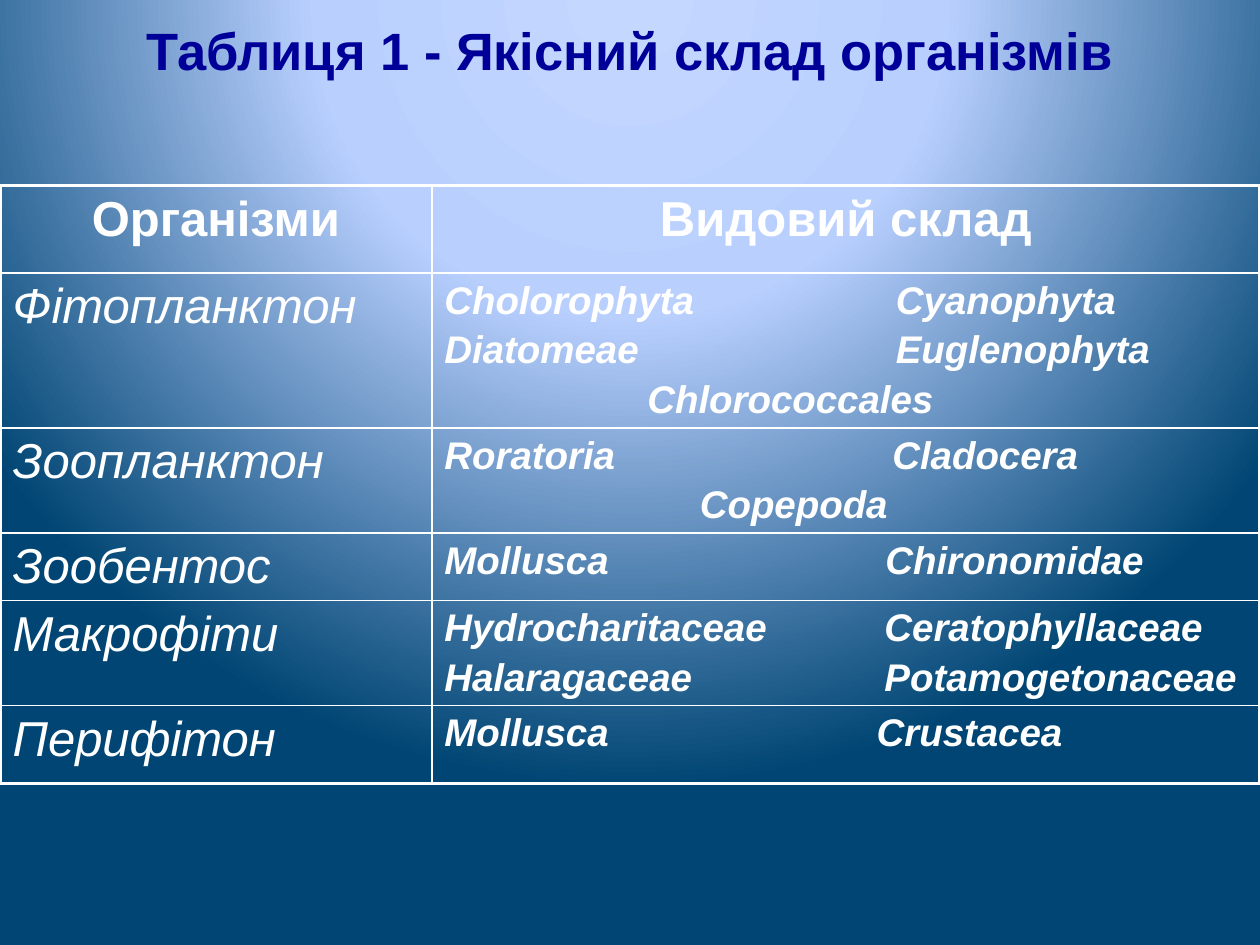
import pptx
import pptx.util
import pptx.oxml
import pptx.oxml.ns
import pptx.dml.color
import pptx.enum.text
from dataclasses import dataclass

Pt = pptx.util.Pt
ALIGN = pptx.enum.text.PP_ALIGN
ANCHOR = pptx.enum.text.MSO_ANCHOR
NS = pptx.oxml.ns.nsdecls("a", "p")

# Content: group, tab stop of the second species column, lines.
# A line is a pair of species, or one species with its indent.
TITLE = "Таблиця 1 - Якісний склад організмів"
HEADERS = ("Організми", "Видовий склад")
GROUPS = [
    ("Фітопланктон", 258, [("Cholorophyta", "Сyanophyta"),
                           ("Diatomeae", "Euglenophyta"),
                           (116, "Chlorococcales")]),
    ("Зоопланктон", 256, [("Roratoria", "Cladocera"), (146, "Copepoda")]),
    ("Зообентос", 252, [("Mollusca", "Chironomidae")]),
    ("Макрофіти", 251.5, [("Hydrocharitaceae", "Ceratophyllaceae"),
                          ("Halaragaceae", "Potamogetonaceae")]),
    ("Перифітон", 247, [("Mollusca", "Crustacea")]),
]

# Layout in points
WIDTH, HEIGHT = 720, 540
TITLE_HEIGHT = 57
TABLE_TOP = 106
COLUMNS = (246.75, 473.25)
ROWS = (50, 79, 60, 38, 58.5, 44.5)


@dataclass(frozen=True)
class Theme:
    font: str = "Arial"
    title: str = "000099"
    text: str = "FFFFFF"
    gradient: tuple = ((0, "C3D7FF"), (40, "B9D0FF"), (100, "004573"))
    title_size: int = 30
    group_size: int = 28
    species_size: int = 22
    thin: float = 1
    thick: float = 2.25
    space_before: float = 0.17


THEME = Theme()


def set_background(s):
    stops = "".join(f'<a:gs pos="{pos * 1000}"><a:srgbClr val="{color}"/></a:gs>'
                    for pos, color in THEME.gradient)
    s.element.cSld.insert(0, pptx.oxml.parse_xml(
        f'<p:bg {NS}><p:bgPr><a:gradFill rotWithShape="1"><a:gsLst>{stops}</a:gsLst>'
        '<a:path path="circle"><a:fillToRect l="50000" t="-80000" r="50000" b="180000"/>'
        '</a:path></a:gradFill><a:effectLst/></p:bgPr></p:bg>'))


def write(p, text, color, **formats):
    r = p.add_run()
    r.text = text
    for name, value in {"name": THEME.font, **formats}.items():
        setattr(r.font, name, value)
    r.font.color.rgb = pptx.dml.color.RGBColor.from_string(color)


def write_cell(p, text, size, align=ALIGN.LEFT, **formats):
    p.alignment = align
    p.space_before = Pt(size * THEME.space_before)
    write(p, text, THEME.text, size=Pt(size), **formats)


def write_species(tf, lines, tab):
    for i, (first, second) in enumerate(lines):
        p = tf.add_paragraph() if i else tf.paragraphs[0]
        paired = isinstance(first, str)
        write_cell(p, f"{first}\t{second}" if paired else second,
                   THEME.species_size, bold=True, italic=True)
        pPr = p._p.get_or_add_pPr()
        if paired:
            pPr.append(pptx.oxml.parse_xml(
                f'<a:tabLst {NS}><a:tab pos="{int(Pt(tab))}" algn="l"/></a:tabLst>'))
        else:
            pPr.set("marL", str(int(Pt(first))))
            pPr.set("indent", "0")


def set_borders(cell, row, col):
    outer = {"L": col == 0, "R": col == len(COLUMNS) - 1,
             "T": row == 0, "B": row == len(ROWS) - 1}
    tcPr = cell._tc.get_or_add_tcPr()
    for i, (side, thick) in enumerate(outer.items()):
        width = int(Pt(THEME.thick if thick else THEME.thin))
        tcPr.insert(i, pptx.oxml.parse_xml(
            f'<a:ln{side} {NS} w="{width}"><a:solidFill><a:srgbClr val="{THEME.text}"/>'
            f'</a:solidFill></a:ln{side}>'))


def add_title(s):
    sp = s.shapes.title
    box = {"left": 0, "top": 0, "width": Pt(WIDTH), "height": Pt(TITLE_HEIGHT)}
    for name, value in box.items():
        setattr(sp, name, value)
    tf = sp.text_frame
    tf.vertical_anchor = ANCHOR.MIDDLE
    tf.auto_size = pptx.enum.text.MSO_AUTO_SIZE.NONE
    p = tf.paragraphs[0]
    p.alignment = ALIGN.CENTER
    write(p, TITLE, THEME.title, size=Pt(THEME.title_size), bold=True)


def add_species_table(s):
    table = s.shapes.add_table(len(ROWS), len(COLUMNS), 0, Pt(TABLE_TOP),
                               Pt(WIDTH), Pt(sum(ROWS))).table
    table.first_row = table.horz_banding = False
    for column, width in zip(table.columns, COLUMNS):
        column.width = Pt(width)
    for row, height in zip(table.rows, ROWS):
        row.height = Pt(height)

    # Clear cells with white rules
    for row in range(len(ROWS)):
        for col in range(len(COLUMNS)):
            cell = table.cell(row, col)
            cell.fill.background()
            set_borders(cell, row, col)

    # Header and body text
    for col, text in enumerate(HEADERS):
        write_cell(table.cell(0, col).text_frame.paragraphs[0], text,
                   THEME.group_size, ALIGN.CENTER, bold=True)
    for row, (group, tab, lines) in enumerate(GROUPS, 1):
        write_cell(table.cell(row, 0).text_frame.paragraphs[0], group,
                   THEME.group_size, bold=False, italic=True)
        write_species(table.cell(row, 1).text_frame, lines, tab)


def main():
    prs = pptx.Presentation()
    prs.slide_width, prs.slide_height = Pt(WIDTH), Pt(HEIGHT)
    s = prs.slides.add_slide(prs.slide_layouts.get_by_name("Title Only"))
    set_background(s)
    add_title(s)
    add_species_table(s)
    prs.save("out.pptx")


if __name__ == "__main__":
    main()
